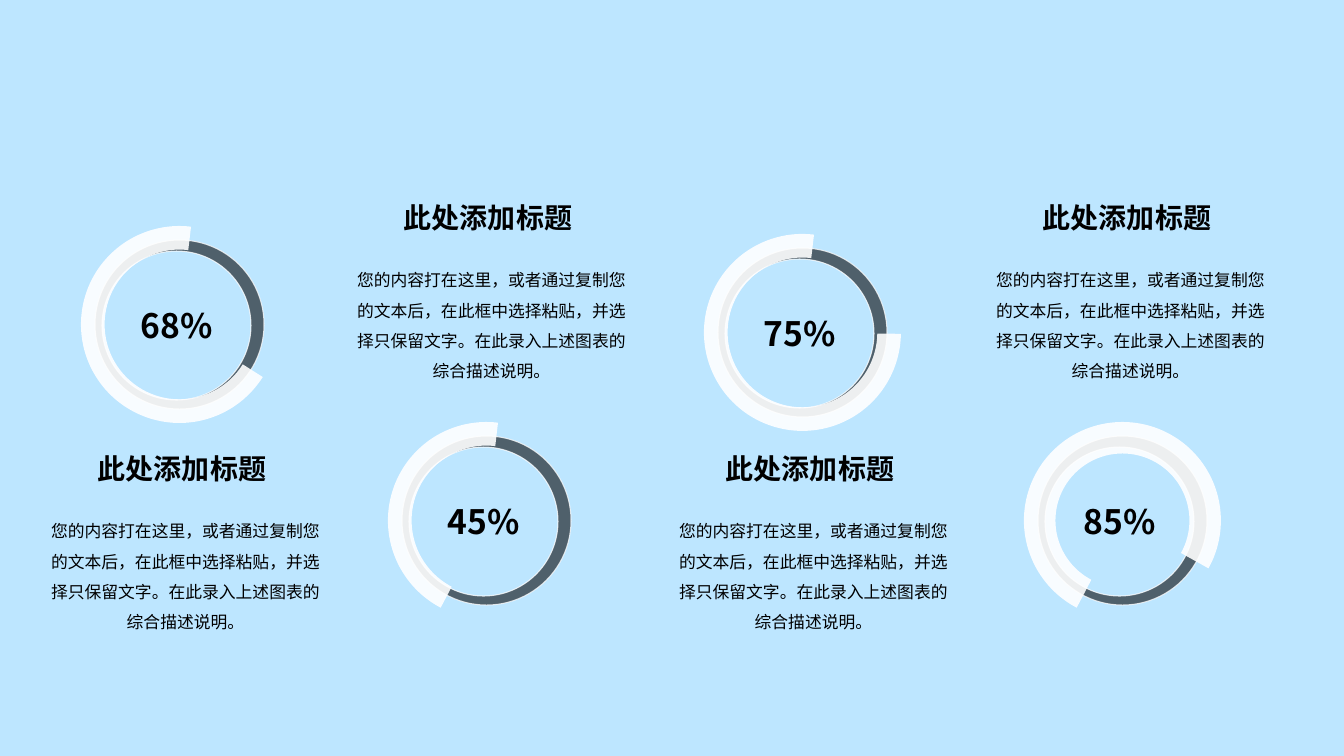
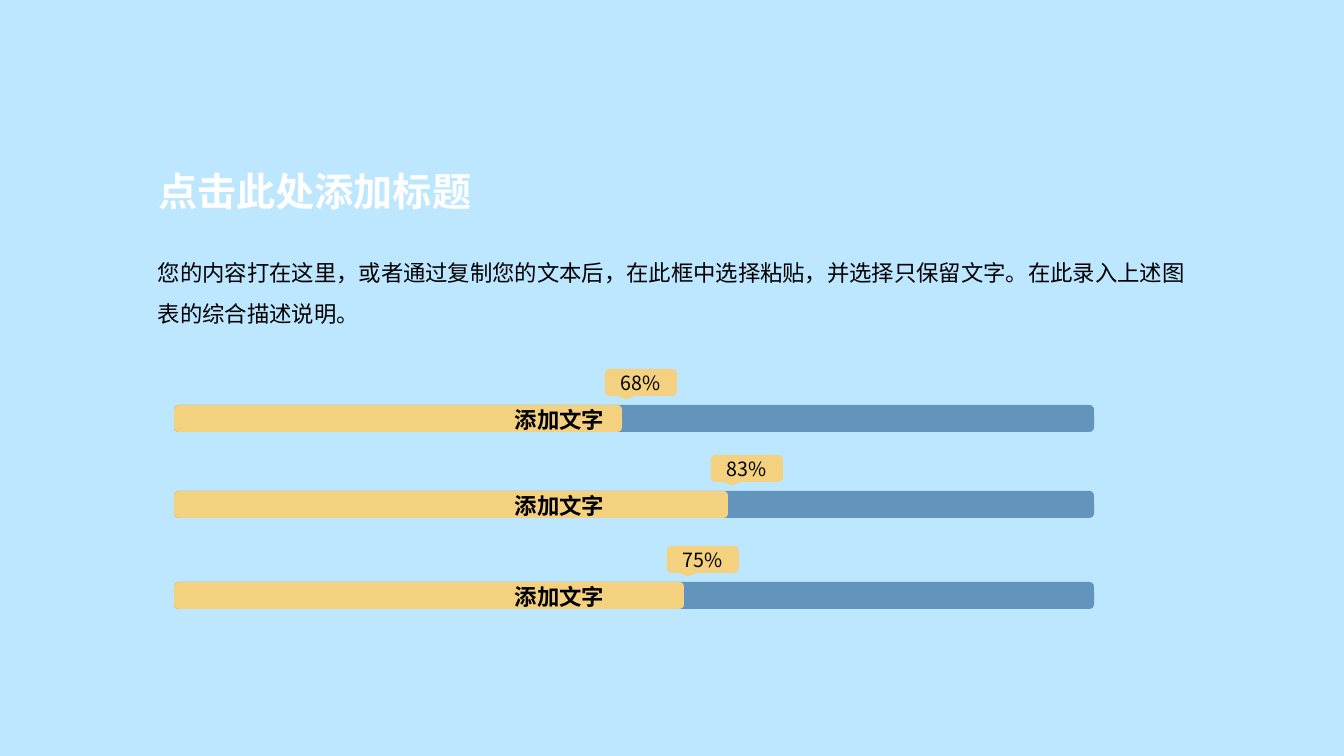
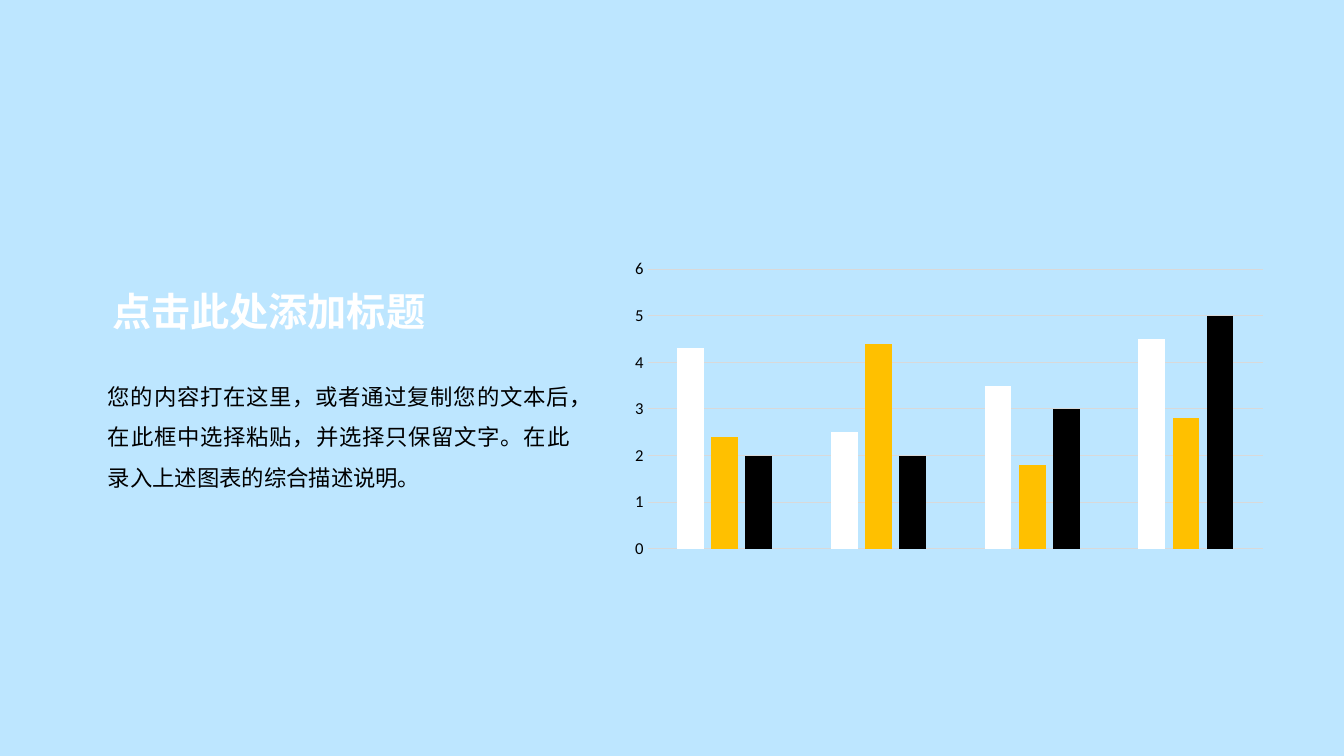
"""Build three infographic slides: rings, progress bars and a column chart."""
from lxml import etree
from pptx import Presentation
from pptx import util as u
from pptx.chart.data import CategoryChartData
from pptx.dml.color import RGBColor
from pptx.enum import chart as charts, shapes, text
from pptx.oxml.ns import qn

SCALE = 914400 / 100.8
FONT = "Noto Sans CJK SC"
SKY, WHITE, BLACK = "BDE6FF", "FFFFFF", "000000"
TRACK, SAND, AMBER = "6294BC", "F4D17F", "FFC000"
LEFT, CENTER, JUSTIFY = text.PP_ALIGN.LEFT, text.PP_ALIGN.CENTER, text.PP_ALIGN.JUSTIFY

TITLE = "点击此处添加标题"
HEADING = "此处添加标题"
LABEL = "添加文字"
BODY = "您的内容打在这里，或者通过复制您的文本后，在此框中选择粘贴，并选择只保留文字。在此录入上述图表的综合描述说明。"

RINGS = [
    ("68%", 81, 226, 32.24, 276.76, 0.12),
    ("45%", 388, 422, 117.66, 276.76, 0.12),
    ("75%", 704, 234, 0.83, 276.76, 0.12),
    ("85%", 1024, 422, 117.66, 29.08, 0.16),
]
CAPTIONS = [(34, 506), (340, 255), (662, 506), (979, 255)]
BARS = [("68%", 405, 448), ("83%", 491, 554), ("75%", 582, 510)]
BAR_LEFT, BAR_WIDTH, BAR_HEIGHT = 174, 920, 27
CATEGORIES = ["1", "2", "3", "4"]
SERIES = [
    ("Series 1", (4.3, 2.5, 3.5, 4.5), WHITE),
    ("Series 2", (2.4, 4.4, 1.8, 2.8), AMBER),
    ("Series 3", (2, 2, 3, 5), BLACK),
]


def px(*lengths):
    return [u.Emu(round(length * SCALE)) for length in lengths]


def rgb(value):
    return RGBColor.from_string(value)


def write(frame, words, size, color=BLACK, bold=False, align=LEFT, spacing=None):
    frame.text = words
    para = frame.paragraphs[0]
    para.alignment = align
    if spacing:
        para.line_spacing = spacing
    span = para.runs[0]
    span.font.size = u.Pt(size)
    span.font.bold = bold
    span.font.color.rgb = rgb(color)
    span.font.name = FONT
    east = etree.SubElement(span.font._element, qn("a:ea"))
    east.set("typeface", FONT)


def add_text(page, area, words, size, wrap=True, **style):
    box = page.shapes.add_textbox(*px(*area))
    box.text_frame.word_wrap = wrap
    write(box.text_frame, words, size, **style)


def set_opacity(shape, where, percent):
    for color in shape.element.xpath(f"./p:spPr/{where}a:solidFill/a:srgbClr"):
        etree.SubElement(color, qn("a:alpha")).set("val", str(percent * 1000))


def add_shape(page, kind, area, color, opacity=100, edge=False, words=None, size=14, bold=False):
    shape = page.shapes.add_shape(kind, *px(*area))
    shape.shadow.inherit = False
    shape.fill.solid()
    shape.fill.fore_color.rgb = rgb(color)
    if opacity < 100:
        set_opacity(shape, "", opacity)
    if edge:
        shape.line.color.rgb = rgb(WHITE)
        shape.line.width = 0
        set_opacity(shape, "a:ln/", 77)
    else:
        shape.line.fill.background()
    if words:
        frame = shape.text_frame
        frame.margin_left = frame.margin_right = frame.margin_top = frame.margin_bottom = 0
        frame.vertical_anchor = text.MSO_ANCHOR.MIDDLE
        write(frame, words, size, bold=bold, align=CENTER)
    return shape


def add_titled_page(deck, left, top):
    page = deck.slides.add_slide(deck.slide_layouts[5])
    title = page.shapes.title
    title.left, title.top, title.width, title.height = px(left, top, 480, 60)
    frame = title.text_frame
    frame.auto_size = text.MSO_AUTO_SIZE.NONE
    frame.vertical_anchor = text.MSO_ANCHOR.MIDDLE
    write(frame, TITLE, 28, color=WHITE, bold=True)
    return page


def add_ring(page, percent, left, top, start, end, thickness):
    kinds = shapes.MSO_SHAPE
    add_shape(page, kinds.OVAL, (left + 14, top + 14, 169, 169), BLACK, opacity=58, edge=True)
    add_shape(page, kinds.OVAL, (left + 21, top + 25, 149, 149), SKY, edge=True,
              words=percent, size=24, bold=True)
    arc = add_shape(page, kinds.BLOCK_ARC, (left, top, 197, 197), WHITE, opacity=90)
    for index, value in enumerate((start * 0.6, end * 0.6, thickness)):
        arc.adjustments[index] = value


def build_rings(deck):
    page = deck.slides.add_slide(deck.slide_layouts[6])
    for ring in RINGS:
        add_ring(page, *ring)
    for left, top in CAPTIONS:
        add_text(page, (left, top, 303, 132), BODY, 12, align=CENTER, spacing=1.5)
        add_text(page, (left + 54, top - 59, 214, 44), HEADING, 20, bold=True)


def build_bars(deck):
    page = add_titled_page(deck, 148, 161)
    add_text(page, (148, 241, 1055, 92), BODY, 16, spacing=1.5)
    kinds = shapes.MSO_SHAPE
    for percent, top, width in BARS:
        for length, color in ((BAR_WIDTH, TRACK), (width, SAND)):
            add_shape(page, kinds.ROUNDED_RECTANGLE, (BAR_LEFT, top, length, BAR_HEIGHT), color)
        add_shape(page, kinds.ROUNDED_RECTANGULAR_CALLOUT,
                  (BAR_LEFT + width - 17, top - 36, 72, BAR_HEIGHT), SAND, words=percent)
        add_text(page, (505, top - 4, 111, 37), LABEL, 16, wrap=False, bold=True)


def build_chart(deck):
    page = add_titled_page(deck, 102, 281)
    data = CategoryChartData()
    data.categories = CATEGORIES
    for name, values, _ in SERIES:
        data.add_series(name, values)
    chart = page.shapes.add_chart(
        charts.XL_CHART_TYPE.COLUMN_CLUSTERED, *px(622, 253, 654, 312), data).chart
    chart.has_title = chart.has_legend = False
    chart.font.size = u.Pt(10)
    chart.font.name = "Calibri"
    chart.font.color.rgb = rgb(BLACK)
    plot = chart.plots[0]
    plot.gap_width, plot.overlap, plot.vary_by_categories = 219, -27, False
    for series, (_, _, color) in zip(plot.series, SERIES):
        series.format.fill.solid()
        series.format.fill.fore_color.rgb = rgb(color)
    chart.category_axis.visible = False
    axis = chart.value_axis
    axis.minimum_scale, axis.maximum_scale, axis.major_unit = 0, 6, 1
    axis.major_tick_mark = charts.XL_TICK_MARK.NONE
    axis.format.line.fill.background()
    axis.tick_labels.font.size = u.Pt(11.9)
    grid = axis.major_gridlines.format.line
    grid.color.rgb = rgb("D9D9D9")
    grid.width = u.Pt(0.75)
    add_text(page, (98, 365, 482, 214), BODY, 16, align=JUSTIFY, spacing=1.5)


def main():
    deck = Presentation()
    deck.slide_width, deck.slide_height = px(1344, 756)
    backdrop = deck.slide_master.background.fill
    backdrop.solid()
    backdrop.fore_color.rgb = rgb(SKY)
    build_rings(deck)
    build_bars(deck)
    build_chart(deck)
    deck.save("out.pptx")


if __name__ == "__main__":
    main()
